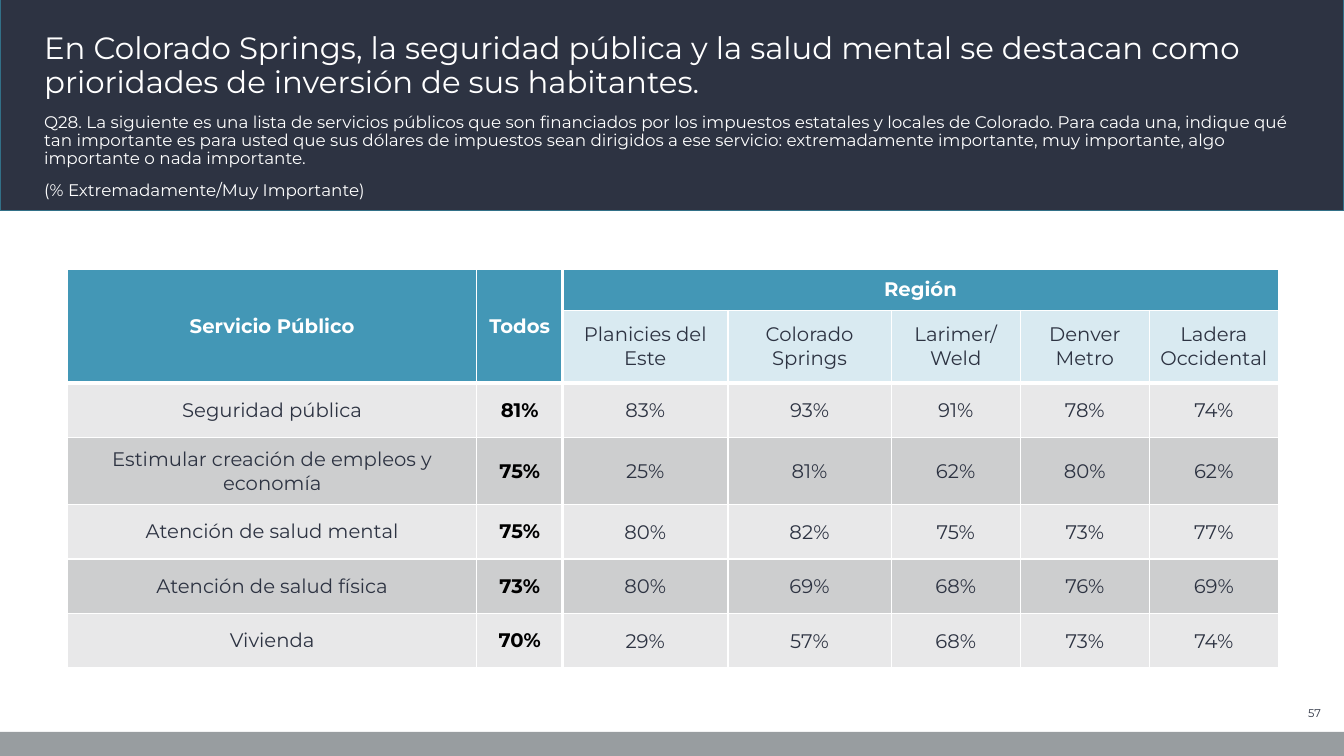
import pptx
import pptx.util
import pptx.dml.color
import pptx.enum.shapes
import pptx.enum.text
import pptx.oxml
from pptx.util import Inches

COLORS = {
    "navy": "2D3342", "navy_line": "327087", "gray": "989DA0",
    "white": "FFFFFF", "black": "000000", "teal": "4397B6",
    "pale_blue": "D9EAF1", "light": "E8E8E9", "dark": "CDCECF",
}
ALIGN = pptx.enum.text.PP_ALIGN
ANCHOR = pptx.enum.text.MSO_ANCHOR


def rgb(name):
    return pptx.dml.color.RGBColor.from_string(COLORS[name])


def write_text(text_frame, text, size, color, align, bold=False):
    text_frame.text = text
    text_frame.word_wrap = True
    for paragraph in text_frame.paragraphs:
        paragraph.alignment = align
        for run in paragraph.runs:
            run.font.name = "Montserrat"
            run.font.size = pptx.util.Pt(size)
            run.font.bold = bold
            run.font.color.rgb = rgb(color)


presentation = pptx.Presentation()
presentation.slide_width = Inches(13.33)
presentation.slide_height = Inches(7.5)
slide = presentation.slides.add_slide(presentation.slide_layouts[6])

# Header and footer bands
for top, height, fill, line in [(-0.03, 2.12, "navy", "navy_line"),
                                (7.26, 0.24, "gray", None)]:
    band = slide.shapes.add_shape(
        pptx.enum.shapes.MSO_SHAPE.RECTANGLE,
        0, Inches(top), Inches(13.33), Inches(height))
    band.shadow.inherit = False
    band.fill.solid()
    band.fill.fore_color.rgb = rgb(fill)
    if line:
        band.line.color.rgb = rgb(line)
        band.line.width = pptx.util.Pt(1)
    else:
        band.line.fill.background()

# Title, question and page number
title = ("En Colorado Springs, la seguridad pública y la salud mental se destacan "
         "como prioridades de inversión de sus habitantes.")
question = ("Q28. La siguiente es una lista de servicios públicos que son financiados "
            "por los impuestos estatales y locales de Colorado. Para cada una, indique "
            "qué tan importante es para usted que sus dólares de impuestos sean "
            "dirigidos a ese servicio: extremadamente importante, muy importante, "
            "algo importante o nada importante.\n(% Extremadamente/Muy Importante)")
text_boxes = [
    (title, 0.34, 0.07, 12.64, 0.97, 22, "white", ALIGN.LEFT, ANCHOR.BOTTOM, 0.9),
    (question, 0.34, 1.08, 12.64, 0.92, 12, "white", ALIGN.LEFT, ANCHOR.TOP, 0.9),
    ("57", 12.42, 6.95, 0.78, 0.24, 8, "navy", ALIGN.RIGHT, ANCHOR.MIDDLE, 1.0),
]
for text, left, top, width, height, size, color, align, anchor, spacing in text_boxes:
    text_frame = slide.shapes.add_textbox(
        Inches(left), Inches(top), Inches(width), Inches(height)).text_frame
    write_text(text_frame, text, size, color, align)
    text_frame.vertical_anchor = anchor
    for index, paragraph in enumerate(text_frame.paragraphs):
        paragraph.line_spacing = spacing
        if index > 0:
            paragraph.space_before = pptx.util.Pt(10)

# Table grid
rows = [
    ["Servicio Público", "Todos", "Región", "", "", "", ""],
    ["", "", "Planicies del Este", "Colorado\nSprings", "Larimer/\vWeld",
     "Denver\nMetro", "Ladera Occidental"],
    ["Seguridad pública", "81%", "83%", "93%", "91%", "78%", "74%"],
    ["Estimular creación de empleos y economía",
     "75%", "25%", "81%", "62%", "80%", "62%"],
    ["Atención de salud mental", "75%", "80%", "82%", "75%", "73%", "77%"],
    ["Atención de salud física", "73%", "80%", "69%", "68%", "76%", "69%"],
    ["Vivienda", "70%", "29%", "57%", "68%", "73%", "74%"],
]
column_widths = [4.06, 0.85, 1.64, 1.62, 1.28, 1.28, 1.28]
row_heights = [0.41, 0.72] + [0.54] * 5
table = slide.shapes.add_table(
    len(rows), len(column_widths), Inches(0.67), Inches(2.67),
    Inches(sum(column_widths)), Inches(sum(row_heights))).table
table.first_row = False
table.horz_banding = False
for column, width in zip(table.columns, column_widths):
    column.width = Inches(width)
for row, height in zip(table.rows, row_heights):
    row.height = Inches(height)
table.cell(0, 0).merge(table.cell(1, 0))
table.cell(0, 1).merge(table.cell(1, 1))
table.cell(0, 2).merge(table.cell(0, 6))

# Table cells
for r, values in enumerate(rows):
    for c, value in enumerate(values):
        cell = table.cell(r, c)
        heading = r == 0 or (r == 1 and c < 2)

        # Thick rules set off the header and the overall column
        thick = {
            "L": c == 2,
            "R": c == 1,
            "T": r == 2 and c >= 2,
            "B": r == 1 or (r == 0 and c < 2),
        }
        properties = cell._tc.get_or_add_tcPr()
        for side, is_thick in thick.items():
            properties.append(pptx.oxml.parse_xml(
                '<a:ln%s xmlns:a="http://schemas.openxmlformats.org/drawingml/2006/main"'
                ' w="%d"><a:solidFill><a:srgbClr val="%s"/></a:solidFill></a:ln%s>'
                % (side, pptx.util.Pt(3 if is_thick else 1), COLORS["white"], side)))

        if heading:
            fill, color = "teal", "white"
        elif r == 1:
            fill, color = "pale_blue", "navy"
        else:
            fill = "light" if r % 2 == 0 else "dark"
            color = "black" if c == 1 else "navy"
        cell.fill.solid()
        cell.fill.fore_color.rgb = rgb(fill)

        if c == 0:
            margins = (0.1, 0.1, 0.1)
        elif c == 1:
            margins = (0 if heading else 0.01, 0.1, 0.1)
        elif r == 0:
            margins = (0.1, 0.05, 0.05)
        elif r == 1:
            margins = (0.01, 0.02, 0.02)
        else:
            margins = (0.01, 0.01, 0)
        side_margin, top_margin, bottom_margin = margins
        cell.margin_left = cell.margin_right = Inches(side_margin)
        cell.margin_top = Inches(top_margin)
        cell.margin_bottom = Inches(bottom_margin)
        cell.vertical_anchor = ANCHOR.MIDDLE
        if value:
            write_text(cell.text_frame, value, 14, color, ALIGN.CENTER,
                       bold=heading or c == 1)

presentation.save("out.pptx")
